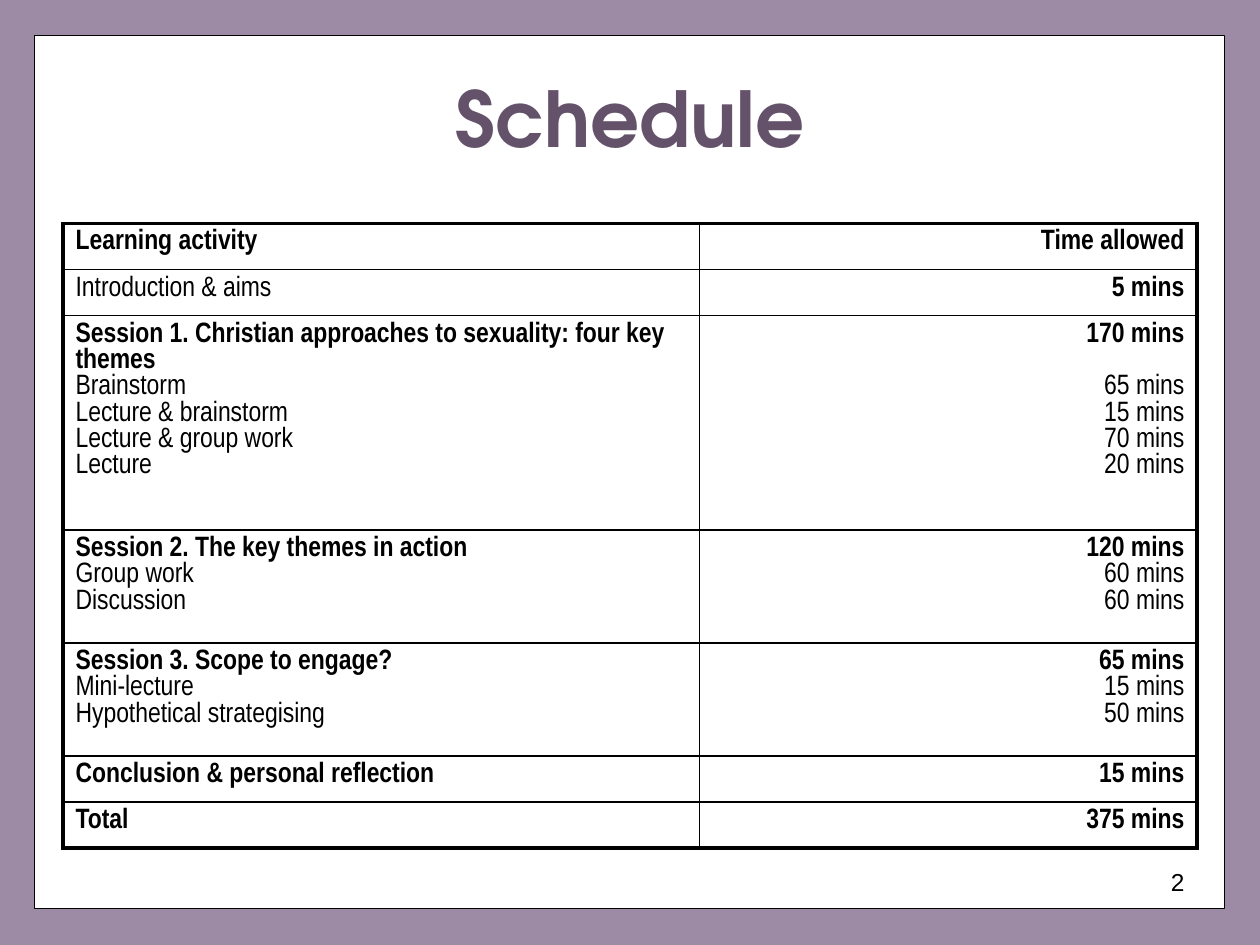
from dataclasses import dataclass

from lxml.etree import SubElement as Sub
from pptx import Presentation
from pptx.dml.color import RGBColor as Rgb
from pptx.enum.shapes import MSO_SHAPE as Kind
from pptx.enum.text import MSO_ANCHOR as Anchor, PP_ALIGN as Align
from pptx.oxml.ns import qn
from pptx.util import Cm, Pt


@dataclass(frozen=True)
class Theme:
    back: str = "9D8AA4"
    panel: str = "FFFFFF"
    ink: str = "000000"
    head: str = "64526A"
    head_font: str = "TeX Gyre Adventor"
    cell_font: str = "Arial Narrow"
    page_font: str = "Arial"
    head_size: float = 44
    cell_size: float = 16
    page_size: float = 14
    thin: float = 1
    thick: float = 2.25


@dataclass(frozen=True)
class Line:
    task: str
    time: str
    bold: bool = False
    gap: float = 0  # space before the time, where the task wraps


@dataclass(frozen=True)
class Row:
    high: float
    lines: tuple[Line, ...]


LOOK = Theme()
LOW, MID, TALL = 0.93, 2.28, 4.32
COLS = (12.83, 10.03)
ROWS = (
    Row(LOW, (Line("Learning activity", "Time allowed", True),)),
    Row(LOW, (Line("Introduction & aims", "5 mins"),)),
    Row(TALL, (
        Line("Session 1. Christian approaches to sexuality: four key themes",
             "170 mins", True),
        Line("Brainstorm", "65 mins", gap=15),
        Line("Lecture & brainstorm", "15 mins"),
        Line("Lecture & group work", "70 mins"),
        Line("Lecture", "20 mins"),
    )),
    Row(MID, (
        Line("Session 2. The key themes in action", "120 mins", True),
        Line("Group work", "60 mins"),
        Line("Discussion", "60 mins"),
    )),
    Row(MID, (
        Line("Session 3. Scope to engage?", "65 mins", True),
        Line("Mini-lecture", "15 mins"),
        Line("Hypothetical strategising", "50 mins"),
    )),
    Row(LOW, (Line("Conclusion & personal reflection", "15 mins", True),)),
    Row(LOW, (Line("Total", "375 mins", True),)),
)


def style(para, name: str, size: float, tint: str, bold: bool, side) -> None:
    para.alignment = side
    font = para.font
    font.name, font.size, font.bold = name, Pt(size), bold
    font.color.rgb = Rgb.from_string(tint)


def edge(cell, tag: str, wide: float) -> None:
    line = Sub(cell._tc.get_or_add_tcPr(), qn(f"a:{tag}"), w=str(Pt(wide)))
    Sub(Sub(line, qn("a:solidFill")), qn("a:srgbClr"), val=LOOK.ink)


def fill_cell(cell, lines: tuple[Line, ...], col: int) -> None:
    frame = cell.text_frame
    for i, line in enumerate(lines):
        para = frame.add_paragraph() if i else frame.paragraphs[0]
        para.text = line.time if col else line.task
        # The introduction has a plain task but a bold time
        bold = line.bold or (col == 1 and len(lines) == 1)
        style(para, LOOK.cell_font, LOOK.cell_size, LOOK.ink, bold,
              Align.RIGHT if col else Align.LEFT)
        if col and line.gap:
            para.space_before = Pt(line.gap)


def draw_table(slide) -> None:
    high = sum(row.high for row in ROWS)
    table = slide.shapes.add_table(len(ROWS), len(COLS), Cm(1.27), Cm(4.5),
                                   Cm(sum(COLS)), Cm(high)).table
    table.first_row = table.horz_banding = False
    for c, wide in enumerate(COLS):
        table.columns[c].width = Cm(wide)
    for r, row in enumerate(ROWS):
        table.rows[r].height = Cm(row.high)
        for c in range(len(COLS)):
            cell = table.cell(r, c)
            fill_cell(cell, row.lines, c)
            outer = {"lnL": c == 0, "lnR": c == len(COLS) - 1,
                     "lnT": r == 0, "lnB": r == len(ROWS) - 1}
            for tag, rim in outer.items():
                edge(cell, tag, LOOK.thick if rim else LOOK.thin)
            cell.fill.background()


def draw_panel(slide) -> None:
    panel = slide.shapes.add_shape(Kind.RECTANGLE, Cm(0.69), Cm(0.71),
                                   Cm(24), Cm(17.6))
    panel.shadow.inherit = False
    panel.fill.solid()
    panel.fill.fore_color.rgb = Rgb.from_string(LOOK.panel)
    panel.line.color.rgb = Rgb.from_string(LOOK.ink)
    panel.line.width = Pt(0.75)


def draw_title(slide) -> None:
    title = slide.shapes.title
    title.left, title.top = Cm(1.27), Cm(0.76)
    title.width, title.height = Cm(22.86), Cm(3.18)
    frame = title.text_frame
    frame.text = "Schedule"
    frame.vertical_anchor = Anchor.MIDDLE
    style(frame.paragraphs[0], LOOK.head_font, LOOK.head_size, LOOK.head,
          True, Align.CENTER)
    # Bring the title in front of the panel
    title.element.getparent().append(title.element)


def draw_page(slide) -> None:
    box = slide.shapes.add_textbox(Cm(18.2), Cm(17.35), Cm(5.93), Cm(1.32))
    frame = box.text_frame
    frame.word_wrap = True
    frame.text = "2"
    style(frame.paragraphs[0], LOOK.page_font, LOOK.page_size, LOOK.ink,
          False, Align.RIGHT)


def main() -> None:
    deck = Presentation()
    deck.slide_width, deck.slide_height = Cm(25.4), Cm(19.05)
    slide = deck.slides.add_slide(deck.slide_layouts[5])
    fill = slide.background.fill
    fill.solid()
    fill.fore_color.rgb = Rgb.from_string(LOOK.back)
    draw_panel(slide)
    draw_page(slide)
    draw_title(slide)
    draw_table(slide)
    deck.save("out.pptx")


if __name__ == "__main__":
    main()
